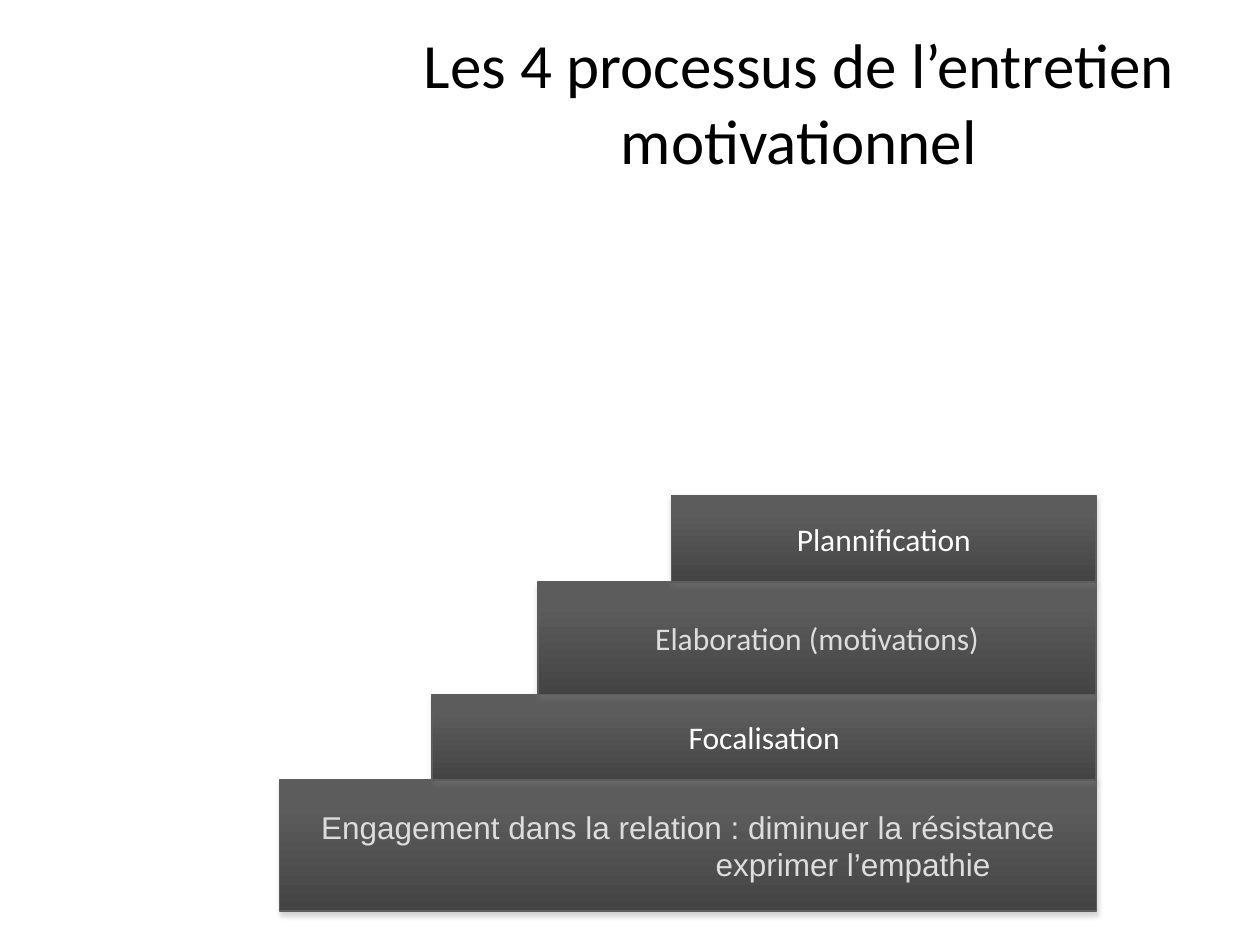
from copy import deepcopy
from dataclasses import dataclass

from lxml.etree import SubElement
from pptx import Presentation
from pptx.dml.color import RGBColor
from pptx.enum.shapes import MSO_SHAPE
from pptx.enum.text import MSO_ANCHOR, MSO_AUTO_SIZE, PP_ALIGN
from pptx.oxml.ns import qn
from pptx.util import Inches, Pt


@dataclass(frozen=True)
class Theme:
    ink: str = "000000"
    bright: str = "FFFFFF"
    soft: str = "DDDDDD"
    edge: str = "5D5D5D"
    shadow: str = "808080"
    stops: tuple = ((0, "5C5C5C"), (0.2, "5C5C5C"), (1, "444444"))
    head_font: str = "Calibri"
    base_font: str = "Arial"
    title_size: int = 36
    step_size: int = 18


THEME = Theme()
RIGHT, BOTTOM = 8.7, 7.23
STEPS = [
    (2.22, 1.04, THEME.base_font, THEME.soft,
     [("Engagement dans la relation : diminuer la résistance", 0),
      ("exprimer l’empathie", 2.62)]),
    (3.43, 0.68, THEME.head_font, THEME.bright, [("Focalisation", 0)]),
    (4.27, 0.89, THEME.head_font, THEME.soft, [("Elaboration (motivations)", 0)]),
    (5.33, 0.69, THEME.head_font, THEME.bright, [("Plannification", 0)]),
]


def apply(target, formats):
    for name, value in formats.items():
        setattr(target, name, value)


def write(tf, lines, font, size, color):
    apply(tf, {"word_wrap": True, "auto_size": MSO_AUTO_SIZE.NONE,
               "vertical_anchor": MSO_ANCHOR.MIDDLE})
    for i, (text, indent) in enumerate(lines):
        p = tf.add_paragraph() if i else tf.paragraphs[0]
        p.alignment = PP_ALIGN.CENTER
        if indent:
            p._p.get_or_add_pPr().set("marL", str(Inches(indent)))
        r = p.add_run()
        r.text = text
        apply(r.font, {"name": font, "size": Pt(size)})
        r.font.color.rgb = RGBColor.from_string(color)


def add_title(s, text):
    sp = s.shapes.title
    apply(sp, {"left": Inches(2.09), "top": 0,
               "width": Inches(8.5), "height": Inches(1.61)})
    write(sp.text_frame, [(text, 0)], THEME.head_font, THEME.title_size, THEME.ink)


def fill_gradient(sp):
    sp.fill.gradient()
    sp.fill.gradient_angle = 270
    first = sp._element.spPr.find(qn("a:gradFill")).find(qn("a:gsLst"))[0]
    first.addnext(deepcopy(first))
    for stop, (position, color) in zip(sp.fill.gradient_stops, THEME.stops):
        stop.position = position
        stop.color.rgb = RGBColor.from_string(color)


def add_shadow(sp):
    sp.shadow.inherit = False
    effects = sp._element.spPr.find(qn("a:effectLst"))
    outer = SubElement(effects, qn("a:outerShdw"), blurRad=str(Pt(3.1)),
                       dist=str(Pt(1.8)), dir="5400000", rotWithShape="0")
    color = SubElement(outer, qn("a:srgbClr"), val=THEME.shadow)
    SubElement(color, qn("a:alpha"), val="35000")


def add_step(s, left, top, height, font, color, lines):
    sp = s.shapes.add_shape(MSO_SHAPE.RECTANGLE, Inches(left), Inches(top),
                            Inches(RIGHT - left), Inches(height))
    fill_gradient(sp)
    sp.line.color.rgb = RGBColor.from_string(THEME.edge)
    sp.line.width = Pt(0.75)
    add_shadow(sp)
    write(sp.text_frame, lines, font, THEME.step_size, color)


def main():
    prs = Presentation()
    apply(prs, {"slide_width": Inches(10), "slide_height": Inches(7.5)})
    s = prs.slides.add_slide(prs.slide_layouts[5])
    add_title(s, "Les 4 processus de l’entretien motivationnel")
    top = BOTTOM
    for left, height, font, color, lines in STEPS:
        top -= height
        add_step(s, left, top, height, font, color, lines)
    prs.save("out.pptx")


if __name__ == "__main__":
    main()
